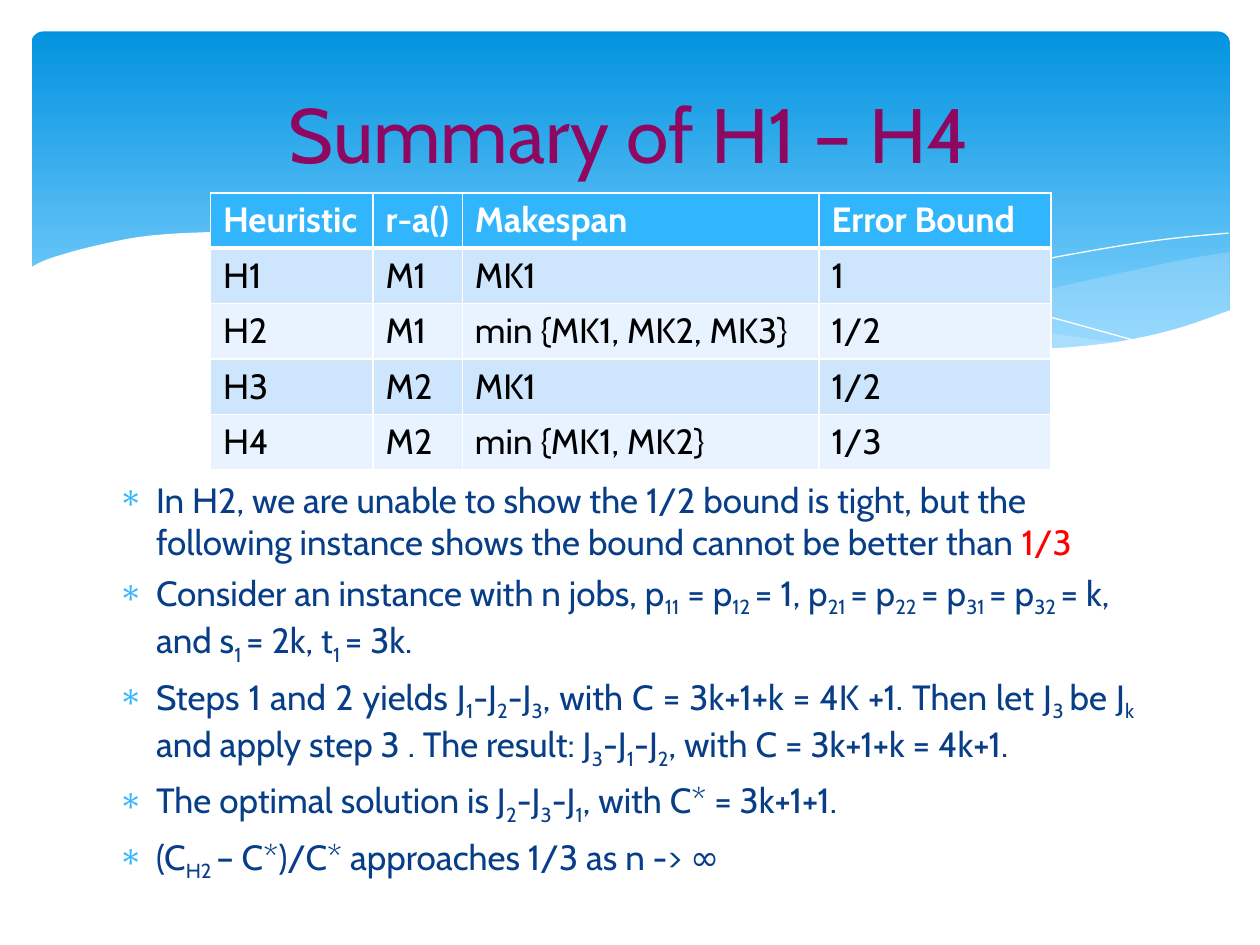
from lxml.etree import SubElement
from pptx import Presentation
from pptx.dml.color import RGBColor
from pptx.enum.shapes import MSO_SHAPE as SHAPE
from pptx.enum.text import MSO_ANCHOR as ANCHOR, PP_ALIGN as ALIGN
from pptx.oxml.ns import qn
from pptx.util import Inches, Pt

FONT, SKY, NAVY = "Cabin", "31B6FD", "073E87"
TITLE = "Summary of H1 – H4"
ROWS = [
    ("Heuristic", "r-a()", "Makespan", "Error Bound"),
    ("H1", "M1", "MK1", "1"),
    ("H2", "M1", "min {MK1, MK2, MK3}", "1/2"),
    ("H3", "M2", "MK1", "1/2"),
    ("H4", "M2", "min {MK1, MK2}", "1/3"),
]
COLS = (1.29, 0.71, 2.83, 1.84)
ROW_H = 0.44
POINTS = [
    ("In H2, we are unable to show the 1/2 bound is tight, but the "
     "following instance shows the bound cannot be better than ", "1/3", ALIGN.LEFT),
    ("Consider an instance with n jobs, p~11~ = p~12 ~= 1, p~21 ~= p~22 ~= p~31 ~"
     "= p~32 ~= k, and s~1 ~= 2k, t~1 ~= 3k.", "", ALIGN.LEFT),
    ("Steps 1 and 2 yields J~1~-J~2~-J~3~, with C = 3k+1+k = 4K +1. "
     "Then let J~3 ~be J~k ~and apply step 3 . The result: J~3~-J~1~-J~2~, "
     "with C = 3k+1+k = 4k+1. ", "", ALIGN.JUSTIFY),
    ("The optimal solution is J~2~-J~3~-J~1~, with C* = 3k+1+1. ", "", ALIGN.JUSTIFY),
    ("(C~H2 ~– C*)/C* approaches 1/3 as n -> ∞", "", ALIGN.JUSTIFY),
]
WAVES = [
    (([(9.76, 2), (9.35, 2.07), (8.61, 2.23), (7.79, 2.42), (6.61, 2.65)],
      [(6.61, 2.65), (7.19, 2.72), (7.69, 2.77), (8.14, 2.78), (8.63, 2.75),
       (9.13, 2.67), (9.49, 2.57), (9.76, 2.47)]), "C6E7FC", 29),
    (([(8.93, 2.73), (8.07, 2.6), (7.06, 2.4), (6.29, 2.22), (5.41, 2.03),
       (4.65, 1.91), (3.8, 1.85), (3.28, 1.87), (2.86, 1.91)],
      [(2.86, 1.91), (3.62, 2.03), (4.49, 2.22), (5.66, 2.48), (6.5, 2.64),
       (7.22, 2.74), (7.85, 2.78), (8.38, 2.78), (8.93, 2.73)]), "C6E7FC", 40),
    (([(3.09, 1.95), (3.53, 1.89), (4.16, 1.87), (4.89, 1.9), (5.82, 2),
       (6.65, 2.13), (7.6, 2.33), (8.31, 2.51), (9.07, 2.72)],), None, 100),
    (([(6.13, 2.57), (6.95, 2.35), (7.76, 2.16), (8.66, 1.99), (9.24, 1.9),
       (9.75, 1.85)],), None, 100),
    (([(9.77, 2.46), (9.3, 2.62), (8.75, 2.73), (8.09, 2.77), (7.26, 2.72),
       (6.48, 2.62), (5.55, 2.45), (4.47, 2.2), (3.65, 2.02), (2.92, 1.9),
       (2.3, 1.85), (1.77, 1.84), (1.19, 1.87), (0.76, 1.95), (0.4, 2.05),
       (0.23, 2.13)],
      [(0.23, 3.29), (9.77, 3.29)]), "FFFFFF", 100),
]


def rgb(code):
    """Turn a hex string into a colour."""
    return RGBColor.from_string(code)


def write(para, text, size=20, color=NAVY, bold=False):
    """Add runs to a paragraph; parts between tildes are subscripts."""
    for i, part in enumerate(text.split("~")):
        if part:
            run = para.add_run()
            run.text = part
            font = run.font
            font.name, font.size, font.bold = FONT, Pt(size), bold
            font.color.rgb = rgb(color)
            if i % 2:
                font._element.set("baseline", "-25000")


def smooth(knots, steps=5):
    """Run a Catmull-Rom curve through the knots."""
    if len(knots) < 3:
        return knots
    ends = [knots[0], *knots, knots[-1]]
    out = []
    for a, b, c, d in zip(ends, ends[1:], ends[2:], ends[3:]):
        for t in (i / steps for i in range(steps)):
            out.append(tuple(
                q + t * (r - p) / 2 + t**2 * (2 * p - 5 * q + 4 * r - s) / 2
                + t**3 * (3 * q - p - 3 * r + s) / 2
                for p, q, r, s in zip(a, b, c, d)))
    return out + [knots[-1]]


def wave(shapes, curves, color, alpha):
    """Draw a filled wave, or a white hairline if it has no colour."""
    pts = [(Inches(x), Inches(y)) for curve in curves for x, y in smooth(curve)]
    pen = shapes.build_freeform(*pts[0])
    pen.add_line_segments(pts[1:], close=color is not None)
    shape = pen.convert_to_shape()
    shape.shadow.inherit = False
    if color:
        shape.fill.solid()
        shape.fill.fore_color.rgb = rgb(color)
        shape.line.fill.background()
        tint = shape.fill._xPr.find(".//" + qn("a:srgbClr"))
        SubElement(tint, qn("a:alpha"), val=str(alpha * 1000))
    else:
        shape.fill.background()
        shape.line.color.rgb = rgb("FFFFFF")
        shape.line.width = 0


def banner(shapes):
    """Draw the blue gradient panel."""
    panel = shapes.add_shape(SHAPE.ROUNDED_RECTANGLE, Inches(0.25), Inches(0.25),
                             Inches(9.51), Inches(2.7))
    panel.adjustments[0] = 0.034
    panel.shadow.inherit = False
    panel.line.fill.background()
    panel.fill.gradient()
    panel.fill.gradient_angle = 270
    for stop, (pos, color) in zip(panel.fill.gradient_stops,
                                  ((0, "0293E0"), (0.9, "83D3FE"))):
        stop.position, stop.color.rgb = pos, rgb(color)


def bullets(shapes):
    """Add the list of remarks."""
    frame = shapes.add_textbox(Inches(0.84), Inches(3.75),
                               Inches(8.26), Inches(3.75)).text_frame
    frame.word_wrap = True
    for i, (text, tail, align) in enumerate(POINTS):
        para = frame.add_paragraph() if i else frame.paragraphs[0]
        para.alignment, para.space_before = align, Pt(4.8)
        props = para._p.get_or_add_pPr()
        props.set("marL", str(Inches(0.3)))
        props.set("indent", str(-Inches(0.3)))
        SubElement(SubElement(props, qn("a:buClr")), qn("a:srgbClr"), val=SKY)
        SubElement(props, qn("a:buChar"), char="∗")
        write(para, text)
        write(para, tail, color="FF0000")


def grid(shapes):
    """Add the table of heuristics."""
    table = shapes.add_table(len(ROWS), len(COLS), Inches(1.67), Inches(1.53),
                             Inches(sum(COLS)), Inches(ROW_H * len(ROWS))).table
    for col, width in zip(table.columns, COLS):
        col.width = Inches(width)
    for r, row in enumerate(ROWS):
        table.rows[r].height = Inches(ROW_H)
        for c, text in enumerate(row):
            cell = table.cell(r, c)
            props = cell._tc.get_or_add_tcPr()
            for side in "LRTB":
                thick = (r, side) in ((0, "B"), (1, "T"))
                line = SubElement(props, qn("a:ln" + side),
                                  w=str(Pt(3 if thick else 1)))
                SubElement(SubElement(line, qn("a:solidFill")),
                           qn("a:srgbClr"), val="FFFFFF")
            cell.fill.solid()
            cell.fill.fore_color.rgb = rgb(
                SKY if r == 0 else "CEE5FE" if r % 2 else "E8F3FF")
            write(cell.text_frame.paragraphs[0], text,
                  color="000000" if r else "FFFFFF", bold=r == 0)


def main():
    """Build the slide and save it."""
    deck = Presentation()
    deck.slide_width, deck.slide_height = Inches(10), Inches(7.5)
    slide = deck.slides.add_slide(deck.slide_layouts[5])
    shapes = slide.shapes
    banner(shapes)
    for curves, color, alpha in WAVES:
        wave(shapes, curves, color, alpha)
    bullets(shapes)
    title = shapes.title
    title.left, title.top = Inches(0.31), Inches(0.37)
    title.width, title.height = Inches(9.37), Inches(1.37)
    title.text_frame.vertical_anchor = ANCHOR.MIDDLE
    para = title.text_frame.paragraphs[0]
    para.alignment = ALIGN.CENTER
    write(para, TITLE, size=44, color="8E0861")
    shapes._spTree.append(title._element)
    grid(shapes)
    deck.save("out.pptx")


if __name__ == "__main__":
    main()
